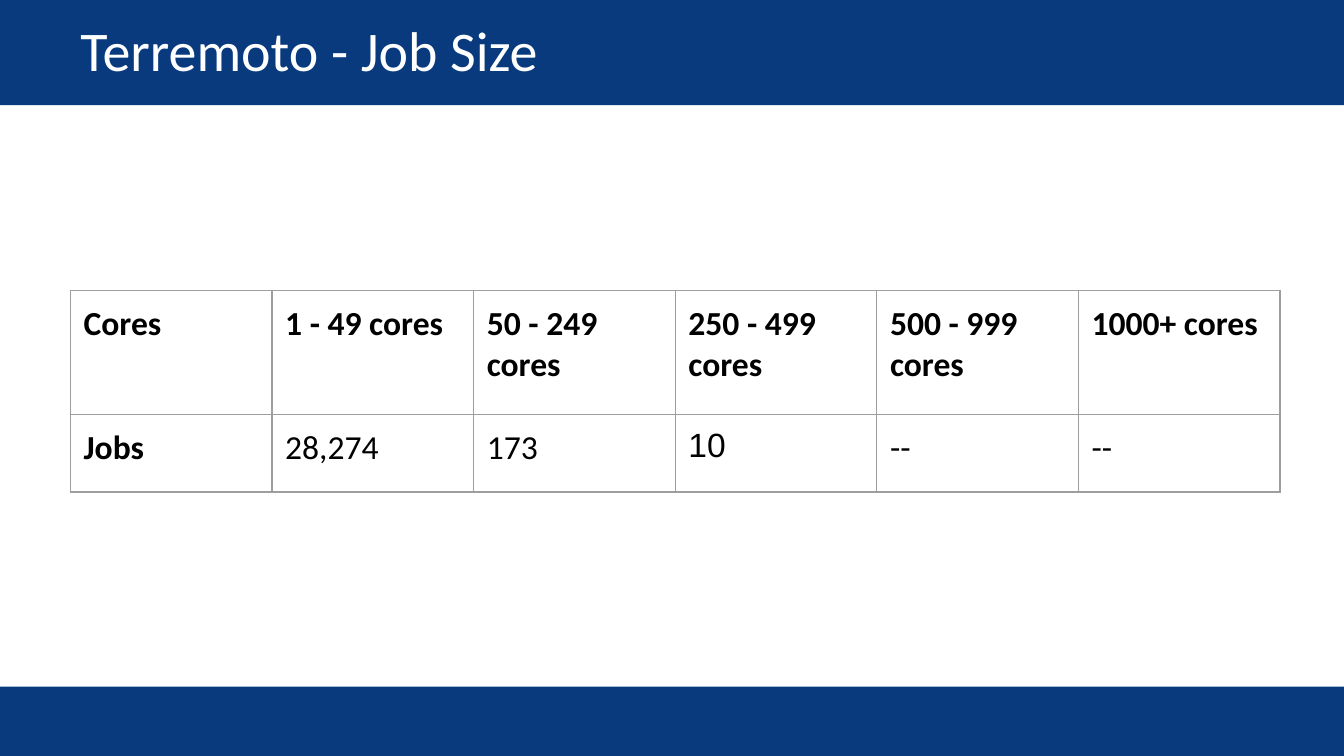
from lxml import etree
from pptx import Presentation
from pptx import util as u
from pptx.dml.color import RGBColor
from pptx.enum import shapes, text
from pptx.oxml.ns import qn

NAVY, WHITE, BLACK, GREY = "083A7D", "FFFFFF", "000000", "9E9E9E"
INSET = u.Cm(0.25)
HEADINGS = ["Cores", "1 - 49 cores", "50 - 249 cores", "250 - 499 cores",
            "500 - 999 cores", "1000+ cores"]
JOBS = ["Jobs", "28,274", "173", "10", "--", "--"]


def color(hex_string):
    return RGBColor.from_string(hex_string)


def write_text(frame, content, size=18, font="Calibri", fill=BLACK, bold=False):
    frame.word_wrap = True
    run = frame.paragraphs[0].add_run()
    run.text = content
    run.font.size = u.Pt(size)
    run.font.name = font
    run.font.bold = bold
    run.font.color.rgb = color(fill)


def add_bar(slide, left, top, width, height):
    bar = slide.shapes.add_shape(shapes.MSO_SHAPE.RECTANGLE, left, top, width, height)
    bar.shadow.inherit = False
    bar.fill.solid()
    bar.fill.fore_color.rgb = color(NAVY)
    bar.line.fill.background()


def add_title(slide, left, top, width, height, content):
    frame = slide.shapes.add_textbox(left, top, width, height).text_frame
    frame.margin_left = frame.margin_right = INSET
    frame.margin_top = frame.margin_bottom = INSET
    frame.vertical_anchor = text.MSO_ANCHOR.MIDDLE
    write_text(frame, content, size=30, fill=WHITE)


def set_borders(cell, hex_string, points):
    properties = cell._tc.get_or_add_tcPr()
    for position, side in enumerate(("lnL", "lnR", "lnT", "lnB")):
        line = etree.Element(qn(f"a:{side}"), w=str(u.Pt(points)))
        fill = etree.SubElement(line, qn("a:solidFill"))
        etree.SubElement(fill, qn("a:srgbClr"), val=hex_string)
        properties.insert(position, line)


def add_job_table(slide, left, top, width, row_heights, rows):
    table = slide.shapes.add_table(len(rows), len(rows[0]), left, top, width,
                                   sum(row_heights)).table
    table.horz_banding = table.first_row = False
    for column in table.columns:
        column.width = width // len(rows[0])
    for row_index, (height, values) in enumerate(zip(row_heights, rows)):
        table.rows[row_index].height = height
        for column_index, value in enumerate(values):
            cell = table.cell(row_index, column_index)
            cell.margin_left = cell.margin_right = INSET
            cell.margin_top = cell.margin_bottom = INSET
            cell.fill.background()
            set_borders(cell, GREY, 0.75)
            write_text(cell.text_frame, value,
                       font="Arial" if value == "10" else "Calibri",
                       bold=row_index == 0 or column_index == 0)


def main():
    presentation = Presentation()
    presentation.slide_width, presentation.slide_height = u.Cm(25.4), u.Cm(14.29)
    slide = presentation.slides.add_slide(presentation.slide_layouts[6])

    # Header and footer bars
    add_bar(slide, 0, u.Cm(-0.03), presentation.slide_width, u.Cm(2.02))
    add_bar(slide, 0, u.Cm(12.98), presentation.slide_width, u.Cm(1.35))

    # Title
    add_title(slide, u.Cm(1.27), u.Cm(0.08), u.Cm(22.86), u.Cm(1.7),
              "Terremoto - Job Size")

    # Jobs by number of cores
    add_job_table(slide, u.Cm(1.33), u.Cm(5.49), u.Cm(22.86),
                  [u.Cm(2.34), u.Cm(1.47)], [HEADINGS, JOBS])

    presentation.save("out.pptx")


if __name__ == "__main__":
    main()
